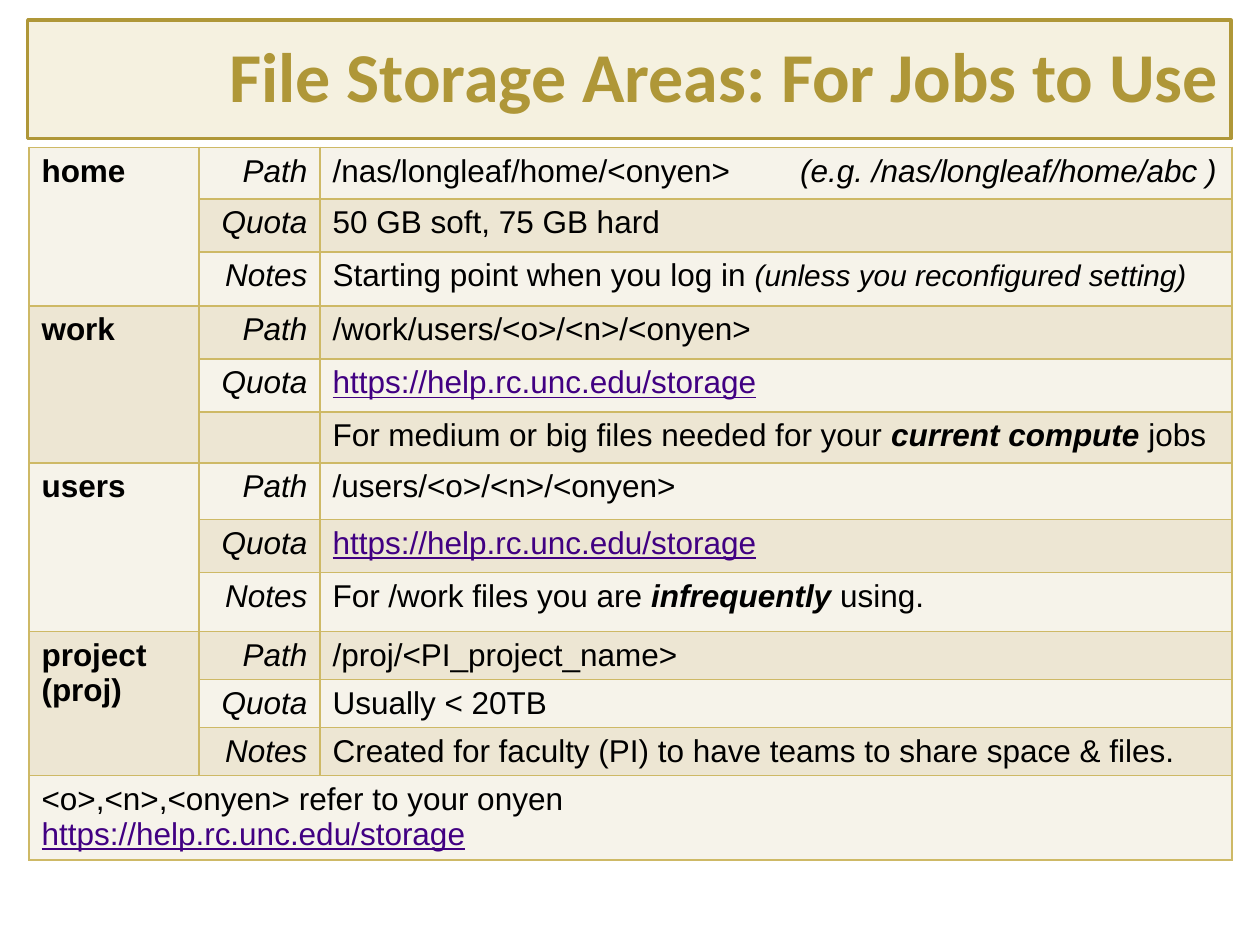
from lxml import etree
from pptx import Presentation
from pptx.dml.color import RGBColor
from pptx.enum.text import MSO_ANCHOR, PP_ALIGN
from pptx.oxml import parse_xml
from pptx.oxml.ns import nsdecls, qn
from pptx.util import Inches, Pt

STORAGE_URL = "https://help.rc.unc.edu/storage"
LINK = [(STORAGE_URL, "u")]
COL_WIDTHS = [1.35, 0.96, 7.24]
ROW_HEIGHTS = [0.41, 0.42, 0.43, 0.42, 0.42, 0.38, 0.45, 0.42, 0.47, 0.38, 0.38, 0.38, 0.67]
AREAS = [
    ("home", [
        ("Path", [("/nas/longleaf/home/<onyen>\t", ""), ("(e.g. /nas/longleaf/home/abc )", "i")]),
        ("Quota", [("50 GB soft, 75 GB hard", "")]),
        ("Notes", [("Starting point when you log in ", ""),
                   ("(unless you reconfigured setting)", "is")]),
    ]),
    ("work", [
        ("Path", [("/work/users/<o>/<n>/<onyen>", "")]),
        ("Quota", LINK),
        ("", [("For medium or big files needed for your ", ""),
              ("current compute ", "bi"), ("jobs", "")]),
    ]),
    ("users", [
        ("Path", [("/users/<o>/<n>/<onyen>", "")]),
        ("Quota", LINK),
        ("Notes", [("For /work files you are ", ""), ("infrequently ", "bi"), ("using.", "")]),
    ]),
    ("project (proj)", [
        ("Path", [("/proj/<PI_project_name>", "")]),
        ("Quota", [("Usually < 20TB", "")]),
        ("Notes", [("Created for faculty (PI) to have teams to share space & files.", "")]),
    ]),
]
FOOTER = [[("<o>,<n>,<onyen> refer to your onyen", "")], LINK]


def rgb(value):
    return RGBColor.from_string(value)


class StorageSlide:
    gold = "AF9738"
    cream = "F5F1E0"
    bands = ("F6F3EA", "EDE6D3")
    border = "CEB966"
    ink = "000000"
    link = "410082"
    font = "Arial"
    title_font = "Calibri"

    def __init__(self, prs):
        self.s = prs.slides.add_slide(prs.slide_layouts[5])

    def title(self, text, x, y, w, h):
        sp = self.s.shapes.title
        sp.left, sp.top, sp.width, sp.height = (Inches(v) for v in (x, y, w, h))
        sp.fill.solid()
        sp.fill.fore_color.rgb = rgb(self.cream)
        sp.line.color.rgb = rgb(self.gold)
        sp.line.width = Pt(2)
        tf = sp.text_frame
        tf.text = text
        tf.vertical_anchor = MSO_ANCHOR.MIDDLE
        p = tf.paragraphs[0]
        p.alignment = PP_ALIGN.RIGHT
        p.line_spacing = 0.9
        font = p.runs[0].font
        font.name, font.size, font.bold = self.title_font, Pt(40), True
        font.color.rgb = rgb(self.gold)

    def table(self, x, y, widths, heights):
        frame = self.s.shapes.add_table(
            len(heights), len(widths), Inches(x), Inches(y),
            Inches(sum(widths)), Inches(sum(heights)))
        table = frame.table
        table.first_row = False
        for column, width in zip(table.columns, widths):
            column.width = Inches(width)
        for i, (row, height) in enumerate(zip(table.rows, heights)):
            row.height = Inches(height)
            for cell in row.cells:
                self.cell_style(cell, self.bands[i % 2])
        return table

    def cell_style(self, cell, fill):
        cell.fill.solid()
        cell.fill.fore_color.rgb = rgb(fill)
        tc_pr = cell._tc.get_or_add_tcPr()
        for i, side in enumerate(("lnL", "lnR", "lnT", "lnB")):
            tc_pr.insert(i, parse_xml(
                f'<a:{side} {nsdecls("a")} w="{Pt(1)}"><a:solidFill>'
                f'<a:srgbClr val="{self.border}"/></a:solidFill></a:{side}>'))

    def cell_text(self, cell, lines, align=PP_ALIGN.LEFT):
        tf = cell.text_frame
        for i, runs in enumerate(lines):
            p = tf.add_paragraph() if i else tf.paragraphs[0]
            p.alignment = align
            if any("\t" in text for text, _ in runs):
                self.tab_stop(p, 3.71)
            p.font.size = Pt(18)
            for text, marks in runs:
                r = p.add_run()
                r.text = text
                font = r.font
                font.name = self.font
                font.size = Pt(17 if "s" in marks else 18)
                font.bold, font.italic, font.underline = (m in marks for m in "biu")
                font.color.rgb = rgb(self.link if "u" in marks else self.ink)

    def tab_stop(self, p, position):
        tabs = etree.SubElement(p._p.get_or_add_pPr(), qn("a:tabLst"))
        etree.SubElement(tabs, qn("a:tab"), pos=str(Inches(position)), algn="l")


def main():
    prs = Presentation()
    prs.slide_width, prs.slide_height = Inches(10), Inches(7.5)
    slide = StorageSlide(prs)
    slide.title("File Storage Areas: For Jobs to Use", 0.22, 0.16, 9.55, 0.94)
    table = slide.table(0.23, 1.17, COL_WIDTHS, ROW_HEIGHTS)

    row = 0
    for name, details in AREAS:
        table.cell(row, 0).merge(table.cell(row + len(details) - 1, 0))
        slide.cell_text(table.cell(row, 0), [[(name, "b")]])
        for label, runs in details:
            slide.cell_text(table.cell(row, 1), [[(label, "i")] if label else []], PP_ALIGN.RIGHT)
            slide.cell_text(table.cell(row, 2), [runs])
            row += 1
    table.cell(row, 0).merge(table.cell(row, 2))
    slide.cell_text(table.cell(row, 0), FOOTER)

    prs.save("out.pptx")


if __name__ == "__main__":
    main()
